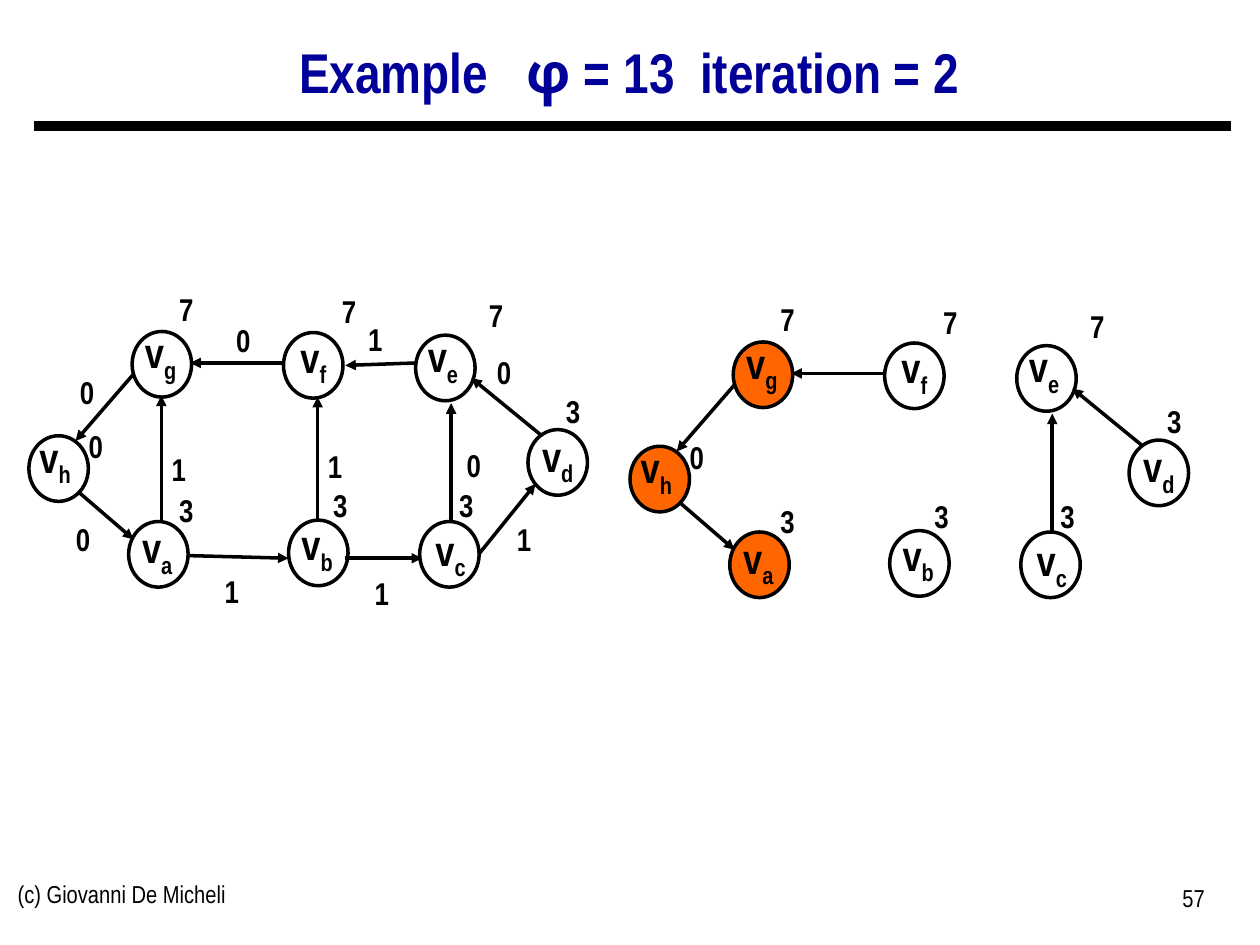
from dataclasses import dataclass

from lxml import etree
from pptx import Presentation
from pptx.dml.color import RGBColor
from pptx.enum import shapes as kinds, text as txt
from pptx.oxml.ns import qn
from pptx.util import Pt


@dataclass(frozen=True)
class Theme:
    ink: RGBColor = RGBColor(0, 0, 0)
    title: RGBColor = RGBColor(0, 0, 0x99)
    marked: RGBColor = RGBColor(0xFF, 0x66, 0)
    font: str = "Arial Narrow"
    greek_font: str = "Noto Sans"
    title_size: int = 32
    vertex_size: int = 24
    number_size: int = 18
    footer_size: int = 14
    stroke: int = 2
    rule: int = 6


THEME = Theme()
CENTER, LEFT, RIGHT = txt.PP_ALIGN.CENTER, txt.PP_ALIGN.LEFT, txt.PP_ALIGN.RIGHT
VERTEX_W, VERTEX_H = 34, 37.5

# Points from the graph's top left corner.
# vertex: outline corner, shift of its name, centre of its arrival time, time
VERTICES = {
    "a": ((57, 136), (-0.7, -2.2), (90, 129.6), "3"),
    "b": ((148.4, 135.2), (-0.7, -3), (178, 126.7), "3"),
    "c": ((223.3, 136), (0.7, -0.7), (250, 126.7), "3"),
    "d": ((285.2, 83.5), (0, -2), (311, 72.7), "3"),
    "e": ((221, 29.5), (-1.4, -5), (267, 18), "7"),
    "f": ((145.5, 28), (0, -3), (183, 15.8), "7"),
    "g": ((59, 27.4), (-0.7, -5), (90, 14.4), "7"),
    "h": ((0, 87), (-2, -5), (38.2, 93), "0"),
}
# edge: start, end, centre of its weight, weight
EDGES = {
    "ag": ((75.7, 135.4), (75.7, 64), (85.7, 105.8), "1"),
    "gh": ((59.8, 51.8), (26.7, 90), (33.2, 62), "0"),
    "ha": ((28, 118.8), (59.8, 146.2), (31, 146.2), "0"),
    "bf": ((165, 135.4), (165, 64.8), (175, 104.4), "1"),
    "ef": ((221.8, 45.4), (180.8, 46.8), (198, 31.7), "1"),
    "cd": ((257, 154.8), (289.5, 114.5), (283, 146.2), "1"),
    "de": ((292.4, 86.4), (252.8, 54), (271.5, 50.4), "0"),
    "ce": ((241.3, 135.4), (241.3, 68.4), (254.2, 103.7), "0"),
    "ab": ((90.8, 155.5), (148.4, 157), (116, 175.7), "1"),
    "bc": ((180.8, 157), (224.7, 157), (201.7, 177), "1"),
    "fg": ((144.8, 45.4), (92.2, 45.4), (122.5, 32.4), "0"),
}


def apply(target, **values):
    for name, value in values.items():
        setattr(target, name, value)


def add_run(paragraph, words, size, color=THEME.ink, name=THEME.font, bold=True):
    run = paragraph.add_run()
    run.text = words
    apply(run.font, size=Pt(size), name=name, bold=bold)
    run.font.color.rgb = color
    return run


def add_label(slide, box, words, size, align=CENTER, anchor=txt.MSO_ANCHOR.MIDDLE,
              bold=True, subscript=None):
    label = slide.shapes.add_textbox(*map(Pt, box))
    apply(label.text_frame, word_wrap=True, vertical_anchor=anchor)
    paragraph = label.text_frame.paragraphs[0]
    paragraph.alignment = align
    add_run(paragraph, words, size, bold=bold)
    if subscript:
        lowered = add_run(paragraph, subscript, size, bold=bold)
        lowered.font._element.set("baseline", "-25000")


def add_line(slide, start, end, width, arrow=False):
    line = slide.shapes.add_connector(
        kinds.MSO_CONNECTOR.STRAIGHT, *map(Pt, (*start, *end)))
    line.line.width = Pt(width)
    line.line.color.rgb = THEME.ink
    if arrow:
        etree.SubElement(line.line._get_or_add_ln(), qn("a:tailEnd"), type="triangle")
    etree.SubElement(line._element.spPr, qn("a:effectLst"))


def add_number(slide, center, number):
    x, y = center
    add_label(slide, (x - 18.75, y - 14.5, 37.5, 29), number, THEME.number_size)


def add_vertex(slide, corner, shift, name, marked):
    x, y = corner
    ring = slide.shapes.add_shape(kinds.MSO_SHAPE.FLOWCHART_CONNECTOR,
                                  *map(Pt, (x, y, VERTEX_W, VERTEX_H)))
    ring.shadow.inherit = False
    if marked:
        ring.fill.solid()
        ring.fill.fore_color.rgb = THEME.marked
    else:
        ring.fill.background()
    ring.line.width = Pt(THEME.stroke)
    ring.line.color.rgb = THEME.ink
    center_x, center_y = x + VERTEX_W / 2 + shift[0], y + VERTEX_H / 2 + shift[1]
    add_label(slide, (center_x - 43.5, center_y - 18, 87, 36), "v",
              THEME.vertex_size, subscript=name)


def add_graph(slide, left, top, edges, weighted, marked=""):
    def place(point):
        return left + point[0], top + point[1]

    for name, (corner, shift, time_center, time) in VERTICES.items():
        add_vertex(slide, place(corner), shift, name, name in marked)
        add_number(slide, place(time_center), time)
    for edge in edges:
        start, end, weight_center, weight = EDGES[edge]
        add_line(slide, place(start), place(end), THEME.stroke, arrow=True)
        if weighted:
            add_number(slide, place(weight_center), weight)


def add_header(slide, left, top, width, height):
    title = slide.shapes.title
    apply(title, left=Pt(left), top=Pt(top), width=Pt(width), height=Pt(height))
    title.text_frame.vertical_anchor = txt.MSO_ANCHOR.MIDDLE
    paragraph = title.text_frame.paragraphs[0]
    apply(paragraph, alignment=CENTER, line_spacing=0.9)
    for words, font in (("Example   ", THEME.font), ("φ", THEME.greek_font),
                        (" = 13  iteration = 2", THEME.font)):
        add_run(paragraph, words, THEME.title_size, THEME.title, font)
    rule_y = top + height + 2
    add_line(slide, (left + 3.5, rule_y), (left + width, rule_y), THEME.rule)


def add_footer(slide, left, top, width, height):
    author_w, page_w = 228, 168
    style = dict(size=THEME.footer_size, bold=False, anchor=txt.MSO_ANCHOR.TOP)
    add_label(slide, (left, top, author_w, height), "(c) Giovanni De Micheli",
              align=LEFT, **style)
    add_label(slide, (left + width - page_w, top + 2, page_w, height), "57",
              align=RIGHT, **style)


def main():
    deck = Presentation()
    apply(deck, slide_width=Pt(720), slide_height=Pt(540))
    slide = deck.slides.add_slide(deck.slide_layouts[5])
    add_header(slide, 16, 16, 687.5, 54)
    add_graph(slide, 16.5, 162, EDGES, weighted=True)
    add_graph(slide, 360, 168, ("gh", "ha", "de", "ce", "fg"),
              weighted=False, marked="agh")
    add_footer(slide, 3, 499, 692.5, 37.5)
    deck.save("out.pptx")


if __name__ == "__main__":
    main()
